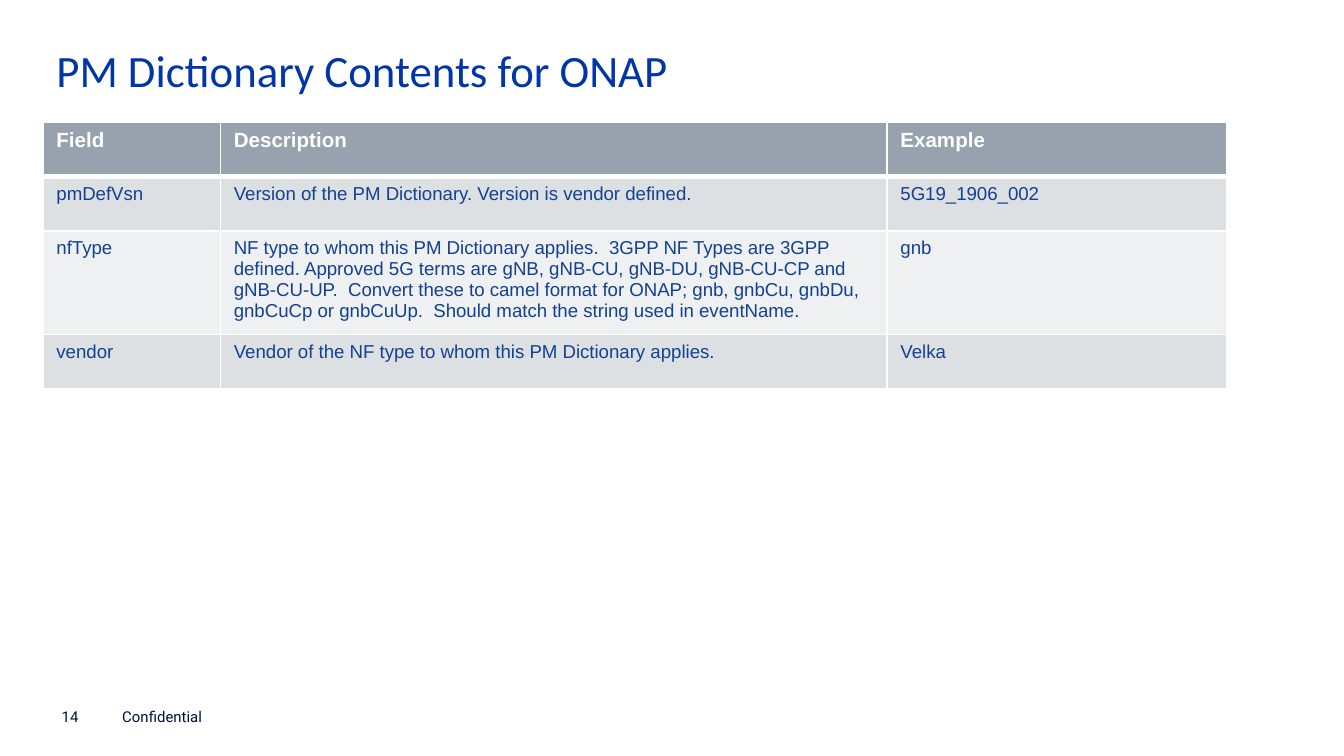
from dataclasses import dataclass

from lxml.etree import SubElement
from pptx import Presentation
from pptx.dml.color import RGBColor
from pptx.enum.text import MSO_ANCHOR, MSO_AUTO_SIZE, PP_ALIGN
from pptx.oxml.ns import qn
from pptx.slide import Slide
from pptx.table import _Cell
from pptx.text.text import TextFrame
from pptx.util import Inches, Pt


@dataclass(frozen=True)
class TextStyle:
    font: str
    size: int
    color: str
    bold: bool = False


@dataclass(frozen=True)
class Theme:
    title: TextStyle = TextStyle("Calibri", 24, "0036A7")
    header: TextStyle = TextStyle("Arial", 11, "FFFFFF", True)
    body: TextStyle = TextStyle("Arial", 10, "124191")
    footer: TextStyle = TextStyle("Roboto", 8, "001135")
    header_fill: str = "98A2AE"
    band_fills: tuple[str, str] = ("DDE0E3", "EFF0F2")
    border: str = "FFFFFF"
    border_width: int = 1
    header_rule_width: int = 3


@dataclass(frozen=True)
class FieldRow:
    field: str
    description: str
    example: str


@dataclass(frozen=True)
class FooterItem:
    text: str
    left: float
    width: float


THEME = Theme()
PAGE_WIDTH = 10
PAGE_HEIGHT = PAGE_WIDTH * 9 / 16
COLUMN_WIDTHS = (1.32, 4.96, 2.53)
ROW_HEIGHT = 29.2 / 72
TABLE_HEIGHT = 1.98
ROWS = (
    FieldRow("Field", "Description", "Example"),
    FieldRow("pmDefVsn", "Version of the PM Dictionary. Version is vendor defined.", "5G19_1906_002"),
    FieldRow(
        "nfType",
        "NF type to whom this PM Dictionary applies.  3GPP NF Types are 3GPP defined. "
        "Approved 5G terms are gNB, gNB-CU, gNB-DU, gNB-CU-CP and gNB-CU-UP.  "
        "Convert these to camel format for ONAP; gnb, gnbCu, gnbDu, gnbCuCp or gnbCuUp.  "
        "Should match the string used in eventName.",
        "gnb",
    ),
    FieldRow("vendor", "Vendor of the NF type to whom this PM Dictionary applies.", "Velka"),
)
FOOTER_ITEMS = (FooterItem("14", 0.46, 0.16), FooterItem("Confidential", 0.91, 1.97))


def write_text(frame: TextFrame, text: str, style: TextStyle) -> None:
    para = frame.paragraphs[0]
    para.alignment = PP_ALIGN.LEFT
    span = para.add_run()
    span.text = text
    span.font.name = style.font
    span.font.size = Pt(style.size)
    span.font.bold = style.bold
    span.font.color.rgb = RGBColor.from_string(style.color)


def add_title(page: Slide, text: str) -> None:
    title = page.shapes.title
    title.left, title.top = Inches(0.32), Inches(0.27)
    title.width, title.height = Inches(9.01), Inches(0.45)
    frame = title.text_frame
    frame.word_wrap = True
    frame.auto_size = MSO_AUTO_SIZE.NONE
    frame.vertical_anchor = MSO_ANCHOR.TOP
    write_text(frame, text, THEME.title)


def set_borders(cell: _Cell, top: int, bottom: int) -> None:
    properties = cell._tc.get_or_add_tcPr()
    side = THEME.border_width
    for tag, width in (("a:lnL", side), ("a:lnR", side), ("a:lnT", top), ("a:lnB", bottom)):
        line = SubElement(properties, qn(tag), w=str(Pt(width)))
        fill = SubElement(line, qn("a:solidFill"))
        SubElement(fill, qn("a:srgbClr"), val=THEME.border)


def add_field_table(page: Slide) -> None:
    table_frame = page.shapes.add_table(
        len(ROWS),
        len(COLUMN_WIDTHS),
        Inches(0.32),
        Inches(0.91),
        Inches(sum(COLUMN_WIDTHS)),
        Inches(TABLE_HEIGHT),
    )
    table = table_frame.table
    for column, width in zip(table.columns, COLUMN_WIDTHS):
        column.width = Inches(width)
    for index, row in enumerate(ROWS):
        table.rows[index].height = Inches(ROW_HEIGHT)
        is_header = index == 0
        style = THEME.header if is_header else THEME.body
        fill = THEME.header_fill if is_header else THEME.band_fills[(index - 1) % 2]
        top = THEME.header_rule_width if index == 1 else THEME.border_width
        bottom = THEME.header_rule_width if is_header else THEME.border_width
        for column_index, text in enumerate((row.field, row.description, row.example)):
            cell = table.cell(index, column_index)
            set_borders(cell, top, bottom)
            cell.fill.solid()
            cell.fill.fore_color.rgb = RGBColor.from_string(fill)
            write_text(cell.text_frame, text, style)
    table_frame.height = Inches(TABLE_HEIGHT)


def add_footer_item(page: Slide, item: FooterItem) -> None:
    box = page.shapes.add_textbox(Inches(item.left), Inches(5.27), Inches(item.width), Inches(0.13))
    frame = box.text_frame
    frame.word_wrap = True
    frame.vertical_anchor = MSO_ANCHOR.BOTTOM
    frame.margin_left = frame.margin_right = frame.margin_top = frame.margin_bottom = 0
    write_text(frame, item.text, THEME.footer)


def main() -> None:
    deck = Presentation()
    deck.slide_width, deck.slide_height = Inches(PAGE_WIDTH), Inches(PAGE_HEIGHT)
    page = deck.slides.add_slide(deck.slide_layouts[5])
    for item in FOOTER_ITEMS:
        add_footer_item(page, item)
    add_title(page, "PM Dictionary Contents for ONAP")
    add_field_table(page)
    deck.save("out.pptx")


if __name__ == "__main__":
    main()
